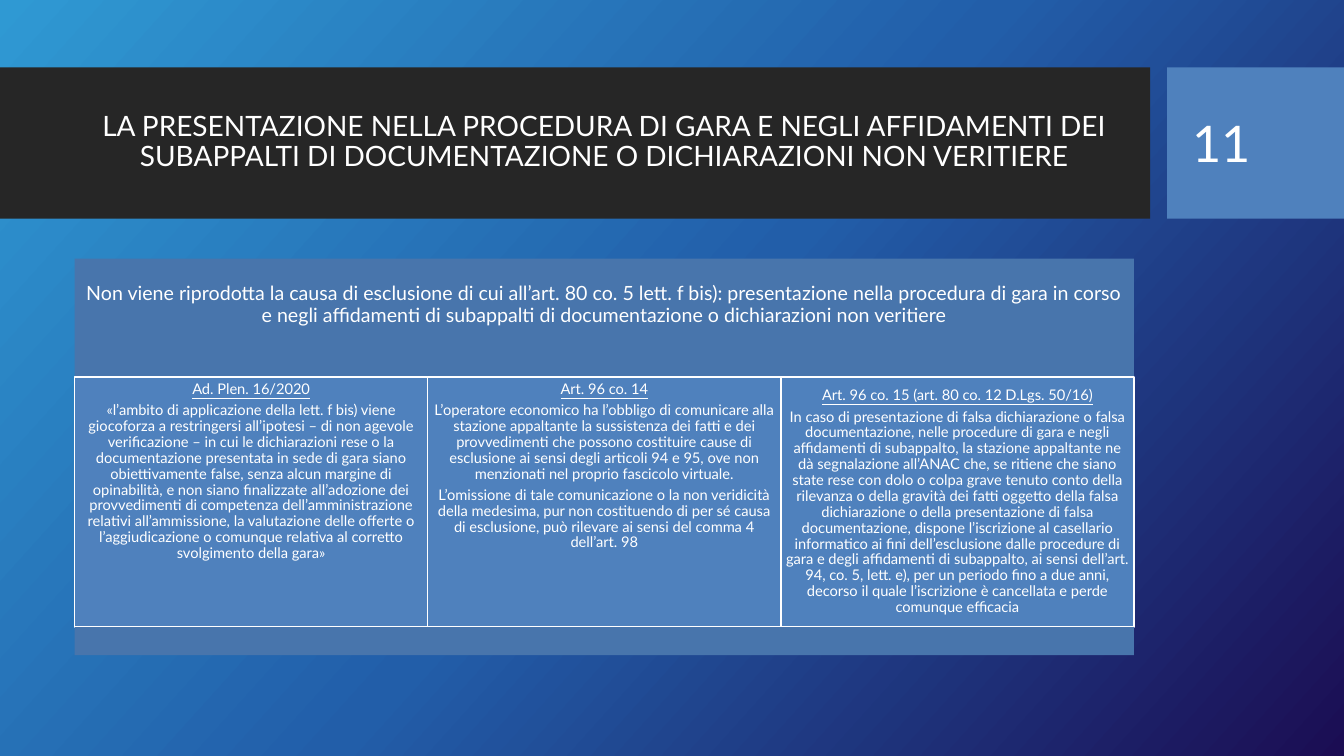
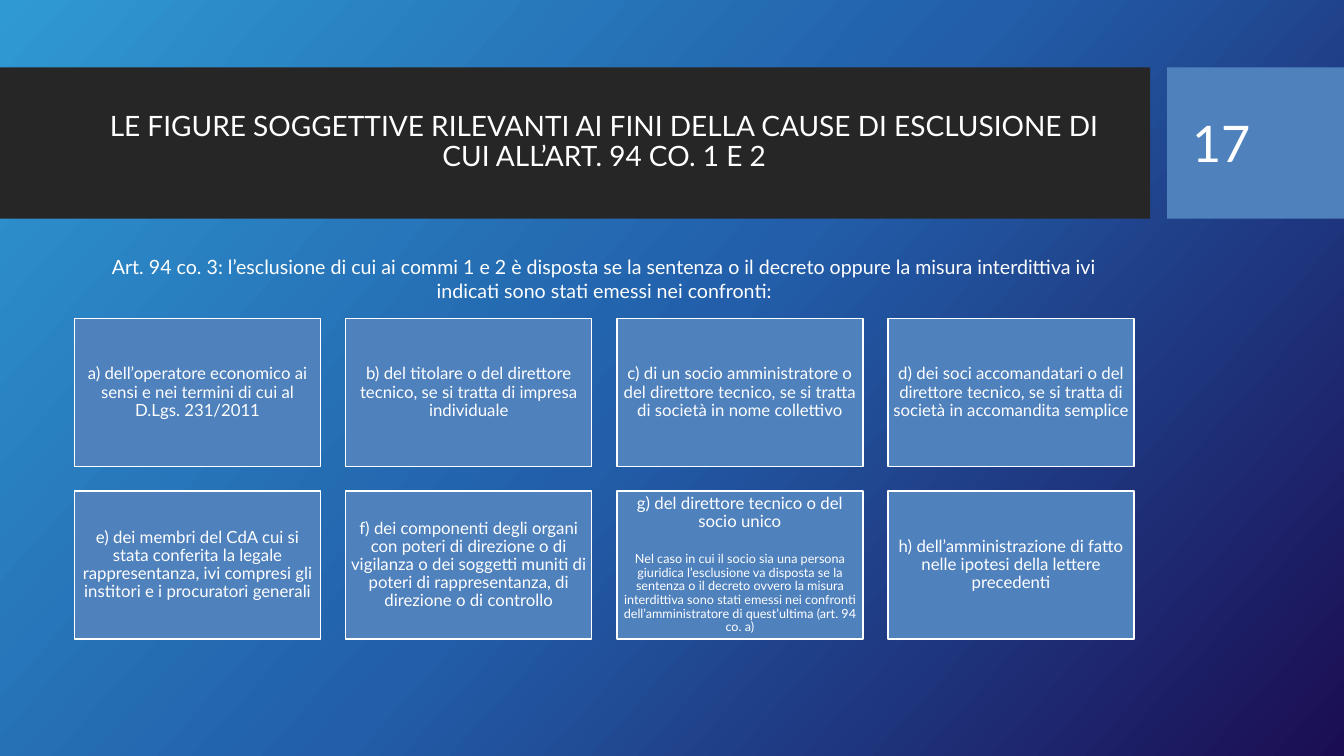
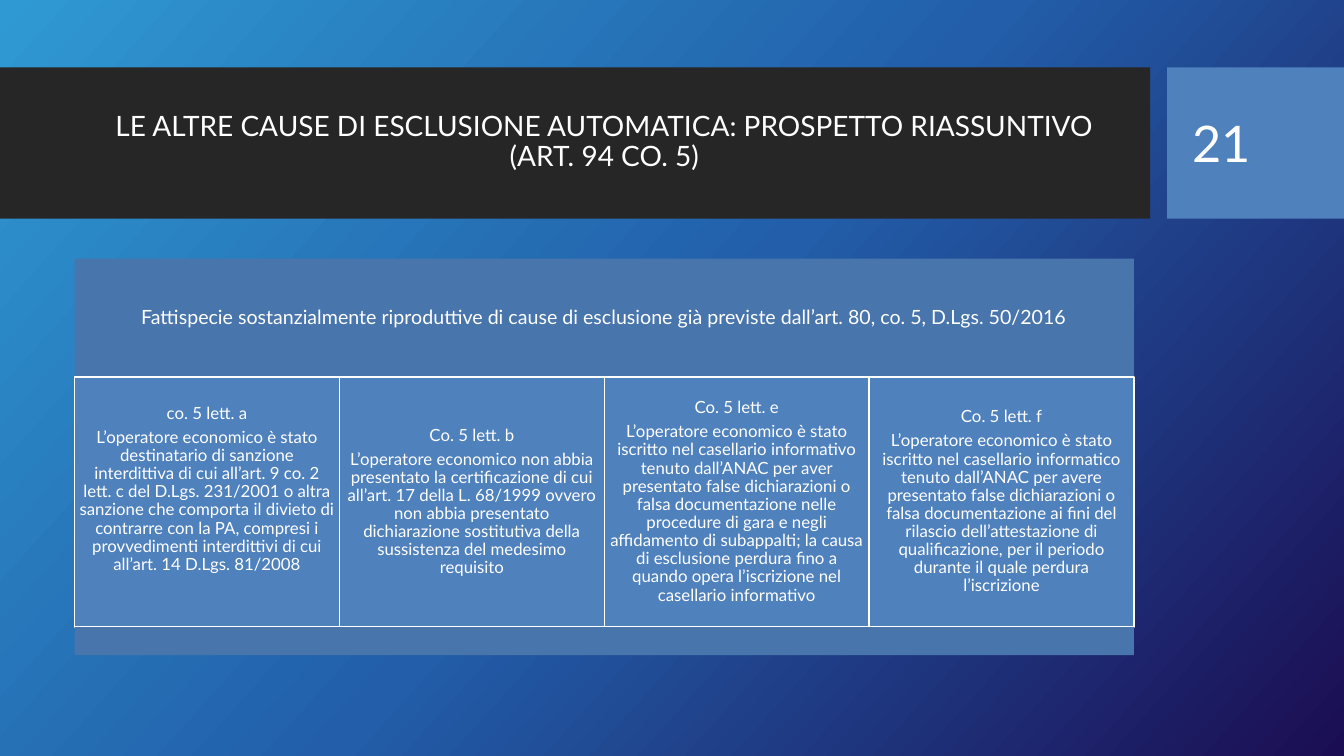
from pptx import Presentation
from pptx.dml.color import RGBColor
from pptx.enum.shapes import MSO_SHAPE
from pptx.enum.text import MSO_ANCHOR, MSO_AUTO_SIZE, PP_ALIGN
from pptx.oxml import parse_xml
from pptx.oxml.ns import nsdecls
from pptx.util import Inches, Pt

COLORS = {"sky": "2F99D3", "blue": "225EA9", "night": "1B0D53", "band": "262626",
          "box": "4F81BD", "bar": "4875AC", "white": "FFFFFF"}
FONT = "Lato"
# Shares of the slide's size, in percent
LEFT, WIDTH = 5.55, 78.83
BAND_TOP, BAND_H = 8.93, 20
HEAD_TOP, HEAD_H = 34.2, 15.67
COLUMN_H, FOOT_H = 33.07, 3.73


def rgb(name):
    return RGBColor.from_string(COLORS[name])


def write(tf, paras, size=12, align=PP_ALIGN.CENTER, spacing=0.9, after=0.35,
          anchor=MSO_ANCHOR.MIDDLE, inset=None, extra_bottom=0, underline_first=False,
          small_size=9, small_before=11, small_from=None):
    """Fill a text frame; paragraphs from index small_from on are set smaller."""
    tf.word_wrap = True
    tf.auto_size = MSO_AUTO_SIZE.NONE
    tf.vertical_anchor = anchor
    if inset is not None:
        tf.margin_left = tf.margin_right = tf.margin_top = Inches(inset)
        tf.margin_bottom = Inches(inset + extra_bottom)
    for i, text in enumerate(paras):
        p = tf.paragraphs[0] if i == 0 else tf.add_paragraph()
        small = small_from is not None and i >= small_from
        points = small_size if small else size
        p.text = text
        p.alignment = align
        p.line_spacing = spacing
        p.space_before = Pt(small_before if small else 0)
        p.space_after = Pt(round(after * points, 1))
        for r in p.runs:
            r.font.name, r.font.size = FONT, Pt(points)
            r.font.color.rgb = rgb("white")
            r.font.underline = underline_first and i == 0


class Deck:
    def __init__(self):
        self.prs = Presentation()
        self.prs.slide_width, self.prs.slide_height = Inches(13.333), Inches(7.5)
        self.layout = self.prs.slide_layouts.get_by_name("Title Only")
        self.s = None
        self.set_background()

    def set_background(self):
        stops = "".join(
            f'<a:gs pos="{pos}"><a:srgbClr val="{COLORS[name]}"/></a:gs>'
            for pos, name in ((0, "sky"), (50000, "blue"), (100000, "night")))
        self.layout.element.cSld.insert(0, parse_xml(
            f'<p:bg {nsdecls("p", "a")}><p:bgPr><a:gradFill rotWithShape="1">'
            f'<a:gsLst>{stops}</a:gsLst><a:lin ang="{42 * 60000}" scaled="0"/>'
            '</a:gradFill><a:effectLst/></p:bgPr></p:bg>'))

    def set_bands(self):
        """Put the two title bands on the layout, in place of its footers."""
        for ph in list(self.layout.placeholders)[1:]:
            ph.element.getparent().remove(ph.element)
        tree = self.layout.shapes.element
        for x, w, fill in ((0, 85.58, "band"), (86.85, 13.15, "box")):
            tree.append(self.box(x, BAND_TOP, w, BAND_H, fill).element)

    def area(self, x, y, w, h):
        sw, sh = self.prs.slide_width, self.prs.slide_height
        return [int(share * full / 100) for share, full in ((x, sw), (y, sh), (w, sw), (h, sh))]

    def slide(self, title, number):
        first = self.s is None
        self.s = self.prs.slides.add_slide(self.layout)
        if first:
            self.set_bands()
        ph = self.s.shapes.title
        ph.left, ph.top, ph.width, ph.height = self.area(LEFT, 10.93, WIDTH, 15.73)
        write(ph.text_frame, [title], size=20, after=0)
        self.text(87.98, 10.93, 9.45, 15.87, [number], size=36, align=PP_ALIGN.LEFT)

    def text(self, x, y, w, h, paras, **style):
        tb = self.s.shapes.add_textbox(*self.area(x, y, w, h))
        write(tb.text_frame, paras, spacing=1, after=0, **style)

    def box(self, x, y, w, h, fill, paras=(), line=False, **style):
        sp = self.s.shapes.add_shape(MSO_SHAPE.RECTANGLE, *self.area(x, y, w, h))
        sp.shadow.inherit = False
        sp.fill.solid()
        sp.fill.fore_color.rgb = rgb(fill)
        if line:
            sp.line.color.rgb = rgb("white")
            sp.line.width = Pt(1)
        else:
            sp.line.fill.background()
        if paras:
            write(sp.text_frame, paras, **style)
        return sp

    def grid(self, cells, cols, top, height, gap_x=0, gap_y=0, **shared):
        """Lay out (paragraphs, style) cells row by row across the content width."""
        w = (WIDTH - gap_x * (cols - 1)) / cols
        for i, (paras, style) in enumerate(cells):
            row, col = divmod(i, cols)
            self.box(LEFT + col * (w + gap_x), top + row * (height + gap_y), w, height,
                     "box", paras, line=True, inset=0.05, **shared, **style)

    def panel(self, heading, cells, extra_bottom=0, **shared):
        """Heading bar, adjoining columns and a foot bar."""
        self.box(LEFT, HEAD_TOP, WIDTH, HEAD_H, "bar", [heading], size=14, inset=0.06,
                 extra_bottom=extra_bottom)
        top = HEAD_TOP + HEAD_H
        self.grid(cells, len(cells), top, COLUMN_H, **shared)
        self.box(LEFT, top + COLUMN_H, WIDTH, FOOT_H, "bar")


def main():
    deck = Deck()

    # False documents
    deck.slide("LA PRESENTAZIONE NELLA PROCEDURA DI GARA E NEGLI AFFIDAMENTI DEI SUBAPPALTI "
               "DI DOCUMENTAZIONE O DICHIARAZIONI NON VERITIERE", "11")
    at_top = {"anchor": MSO_ANCHOR.TOP}
    deck.panel(
        "Non viene riprodotta la causa di esclusione di cui all’art. 80 co. 5 lett. f bis): "
        "presentazione nella procedura di gara in corso e negli affidamenti di subappalti di "
        "documentazione o dichiarazioni non veritiere",
        [(["Ad. Plen. 16/2020",
           "«l’ambito di applicazione della lett. f bis) viene giocoforza a restringersi "
           "all’ipotesi – di non agevole verificazione – in cui le dichiarazioni rese o la "
           "documentazione presentata in sede di gara siano obiettivamente false, senza alcun "
           "margine di opinabilità, e non siano finalizzate all’adozione dei provvedimenti di "
           "competenza dell’amministrazione relativi all’ammissione, la valutazione delle "
           "offerte o l’aggiudicazione o comunque relativa al corretto svolgimento della gara»"],
          at_top),
         (["Art. 96 co. 14",
           "L’operatore economico ha l’obbligo di comunicare alla stazione appaltante la "
           "sussistenza dei fatti e dei provvedimenti che possono costituire cause di "
           "esclusione ai sensi degli articoli 94 e 95, ove non menzionati nel proprio "
           "fascicolo virtuale.",
           "L’omissione di tale comunicazione o la non veridicità della medesima, pur non "
           "costituendo di per sé causa di esclusione, può rilevare ai sensi del comma 4 "
           "dell’art. 98"], at_top),
         (["Art. 96 co. 15 (art. 80 co. 12 D.Lgs. 50/16)",
           "In caso di presentazione di falsa dichiarazione o falsa documentazione, nelle "
           "procedure di gara e negli affidamenti di subappalto, la stazione appaltante ne dà "
           "segnalazione all’ANAC che, se ritiene che siano state rese con dolo o colpa grave "
           "tenuto conto della rilevanza o della gravità dei fatti oggetto della falsa "
           "dichiarazione o della presentazione di falsa documentazione, dispone l’iscrizione "
           "al casellario informatico ai fini dell’esclusione dalle procedure di gara e degli "
           "affidamenti di subappalto, ai sensi dell’art. 94, co. 5, lett. e), per un periodo "
           "fino a due anni, decorso il quale l’iscrizione è cancellata e perde comunque "
           "efficacia"], {})],
        extra_bottom=0.25, size=10.5, underline_first=True)

    # Relevant persons
    deck.slide("LE FIGURE SOGGETTIVE RILEVANTI AI FINI DELLA CAUSE DI ESCLUSIONE DI CUI "
               "ALL’ART. 94 CO. 1 E 2", "17")
    deck.grid(
        [(["a) dell’operatore economico ai sensi e nei termini di cui al D.Lgs. 231/2011"], {}),
         (["b) del titolare o del direttore tecnico, se si tratta di impresa individuale"], {}),
         (["c) di un socio amministratore o del direttore tecnico, se si tratta di società in "
           "nome collettivo"], {}),
         (["d) dei soci accomandatari o del direttore tecnico, se si tratta di società in "
           "accomandita semplice"], {}),
         (["e) dei membri del CdA cui si stata conferita la legale rappresentanza, ivi compresi "
           "gli institori e i procuratori generali"], {}),
         (["f) dei componenti degli organi con poteri di direzione o di vigilanza o dei "
           "soggetti muniti di poteri di rappresentanza, di direzione o di controllo"], {}),
         (["g) del direttore tecnico o del socio unico",
           "Nel caso in cui il socio sia una persona giuridica l’esclusione va disposta se la "
           "sentenza o il decreto ovvero la misura interdittiva sono stati emessi nei confronti "
           "dell’amministratore di quest’ultima (art. 94 co. a)"], {"small_from": 1}),
         (["h) dell’amministrazione di fatto nelle ipotesi della lettere precedenti"], {})],
        cols=4, top=42.13, height=19.6, gap_x=1.87, gap_y=3.2)
    deck.text(LEFT, 33.07, WIDTH, 7.6,
              ["Art. 94 co. 3: l’esclusione di cui ai commi 1 e 2 è disposta se la sentenza o il "
               "decreto oppure la misura interdittiva ivi indicati sono stati emessi nei "
               "confronti:"], size=14, anchor=MSO_ANCHOR.TOP)

    # Other automatic causes
    deck.slide("LE ALTRE CAUSE DI ESCLUSIONE AUTOMATICA: PROSPETTO RIASSUNTIVO\v"
               "(ART. 94 CO. 5)", "21")
    deck.panel(
        "Fattispecie sostanzialmente riproduttive di cause di esclusione già previste "
        "dall’art. 80, co. 5, D.Lgs. 50/2016",
        [(["co. 5 lett. a",
           "L’operatore economico è stato destinatario di sanzione interdittiva di cui "
           "all’art. 9 co. 2 lett. c del D.Lgs. 231/2001 o altra sanzione che comporta il "
           "divieto di contrarre con la PA, compresi i provvedimenti interdittivi di cui "
           "all’art. 14 D.Lgs. 81/2008"], {"extra_bottom": 0.25}),
         (["Co. 5 lett. b",
           "L’operatore economico non abbia presentato la certificazione di cui all’art. 17 "
           "della L. 68/1999 ovvero non abbia presentato dichiarazione sostitutiva della "
           "sussistenza del medesimo requisito"], {}),
         (["Co. 5 lett. e",
           "L’operatore economico è stato iscritto nel casellario informativo tenuto dall’ANAC "
           "per aver presentato false dichiarazioni o falsa documentazione nelle procedure di "
           "gara e negli affidamento di subappalti; la causa di esclusione perdura fino a "
           "quando opera l’iscrizione nel casellario informativo"], {}),
         (["Co. 5 lett. f",
           "L’operatore economico è stato iscritto nel casellario informatico tenuto dall’ANAC "
           "per avere presentato false dichiarazioni o falsa documentazione ai fini del "
           "rilascio dell’attestazione di qualificazione, per il periodo durante il quale "
           "perdura l’iscrizione"], {})])

    deck.prs.save("out.pptx")


if __name__ == "__main__":
    main()
